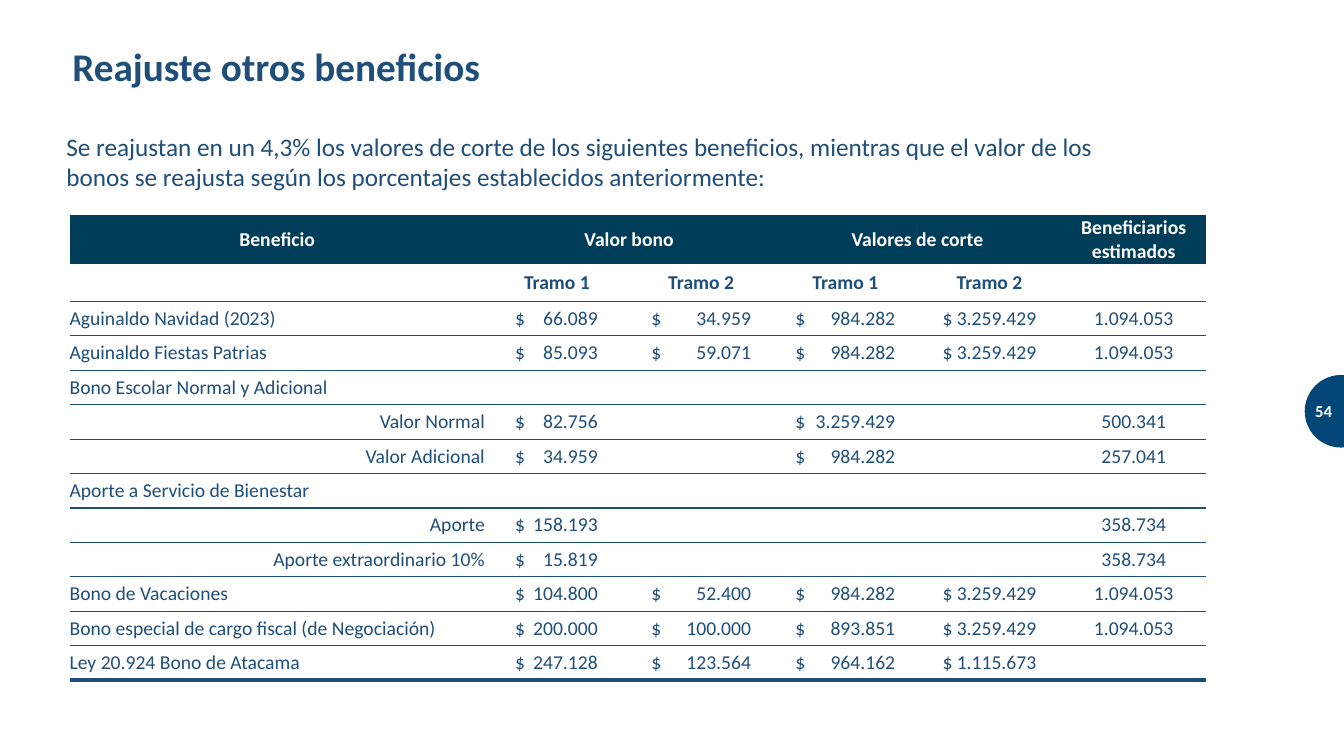
from lxml.etree import SubElement
from pptx import Presentation
from pptx.dml.color import RGBColor
from pptx.enum.shapes import MSO_SHAPE
from pptx.enum.text import MSO_ANCHOR, PP_ALIGN
from pptx.oxml.ns import qn
from pptx.util import Inches, Pt

NAVY = RGBColor(0x1F, 0x4E, 0x79)
HEADER = RGBColor(0x00, 0x3D, 0x58)
BADGE = RGBColor(0x00, 0x46, 0x77)
WHITE = RGBColor(0xFF, 0xFF, 0xFF)
PLAIN_TABLE = "{2D5ABB26-0587-4C30-8999-92F81FD0307C}"

COLUMN_WIDTHS = [4.12] + [1.43] * 5
HEADER_HEIGHTS = [0.49, 0.37]
TABLE_HEIGHT = 4.62
MONEY_INSETS = {1: (0.3, 0.82), 2: (0.22, 0.99), 3: (0.22, 0.99), 4: (0.25, 0.93)}
SUBITEMS = {"Valor Normal", "Valor Adicional", "Aporte", "Aporte extraordinario 10%"}
HEADINGS = [
    ["Beneficio", "Valor bono", "", "Valores de corte", "", "Beneficiarios estimados"],
    ["", "Tramo 1", "Tramo 2", "Tramo 1", "Tramo 2", ""],
]
BENEFITS = [
    ["Aguinaldo Navidad (2023)", "66.089", "34.959", "984.282", "3.259.429", "1.094.053"],
    ["Aguinaldo Fiestas Patrias", "85.093", "59.071", "984.282", "3.259.429", "1.094.053"],
    ["Bono Escolar Normal y Adicional", "", "", "", "", ""],
    ["Valor Normal", "82.756", "", "3.259.429", "", "500.341"],
    ["Valor Adicional", "34.959", "", "984.282", "", "257.041"],
    ["Aporte a Servicio de Bienestar", "", "", "", "", ""],
    ["Aporte", "158.193", "", "", "", "358.734"],
    ["Aporte extraordinario 10%", "15.819", "", "", "", "358.734"],
    ["Bono de Vacaciones", "104.800", "52.400", "984.282", "3.259.429", "1.094.053"],
    ["Bono especial de cargo fiscal (de Negociación)",
     "200.000", "100.000", "893.851", "3.259.429", "1.094.053"],
    ["Ley 20.924 Bono de Atacama", "247.128", "123.564", "964.162", "1.115.673", ""],
]


class SlideBuilder:
    font = "Calibri"

    def __init__(self, prs):
        self.s = prs.slides.add_slide(prs.slide_layouts[6])

    def format(self, p, size, color, bold=False, align=PP_ALIGN.LEFT):
        p.alignment = align
        for r in p.runs:
            r.font.name = self.font
            r.font.size = Pt(size)
            r.font.bold = bold
            r.font.color.rgb = color

    def text(self, text, box, size, color, bold=False, align=PP_ALIGN.LEFT,
             anchor=MSO_ANCHOR.MIDDLE):
        tf = self.s.shapes.add_textbox(*map(Inches, box)).text_frame
        tf.word_wrap = True
        tf.vertical_anchor = anchor
        tf.text = text
        self.format(tf.paragraphs[0], size, color, bold, align)

    def circle(self, box, color):
        sp = self.s.shapes.add_shape(MSO_SHAPE.OVAL, *map(Inches, box))
        sp.shadow.inherit = False
        sp.fill.solid()
        sp.fill.fore_color.rgb = color
        sp.line.fill.background()

    def border(self, cell, side, width):
        ln = SubElement(cell._tc.get_or_add_tcPr(), qn(f"a:{side}"), w=str(Pt(width)))
        if width:
            fill = SubElement(ln, qn("a:solidFill"))
            SubElement(fill, qn("a:srgbClr"), val=str(NAVY))
        else:
            SubElement(ln, qn("a:noFill"))

    def money(self, cell, col):
        inset, tab = MONEY_INSETS[col]
        cell.margin_left = Inches(inset)
        p = cell.text_frame.paragraphs[0]
        p.text = f"$\t{p.text}"
        tabs = SubElement(p._p.get_or_add_pPr(), qn("a:tabLst"))
        SubElement(tabs, qn("a:tab"), pos=str(Inches(tab)), algn="r")

    def cell(self, cell, text, row, col, last):
        cell.margin_left = cell.margin_right = cell.margin_top = cell.margin_bottom = 0
        cell.vertical_anchor = MSO_ANCHOR.MIDDLE
        self.border(cell, "lnT", 1 if row > 1 else 0)
        self.border(cell, "lnB", 3 if row == last else 1 if row else 0)
        if row == 0:
            cell.fill.solid()
            cell.fill.fore_color.rgb = HEADER
        else:
            cell.fill.background()
        if not text:
            return
        cell.text_frame.text = text
        heading = row < len(HEADINGS)
        align = PP_ALIGN.CENTER
        if not heading and col in MONEY_INSETS:
            self.money(cell, col)
            align = PP_ALIGN.LEFT
        elif not heading and col == 0:
            align = PP_ALIGN.RIGHT if text in SUBITEMS else PP_ALIGN.LEFT
        color = WHITE if row == 0 else NAVY
        self.format(cell.text_frame.paragraphs[0], 14, color, heading, align)

    def table(self, rows, left, top):
        row_height = (TABLE_HEIGHT - sum(HEADER_HEIGHTS)) / len(BENEFITS)
        heights = HEADER_HEIGHTS + [row_height] * len(BENEFITS)
        box = (left, top, sum(COLUMN_WIDTHS), TABLE_HEIGHT)
        frame = self.s.shapes.add_table(len(rows), len(COLUMN_WIDTHS), *map(Inches, box))
        table = frame.table
        table.first_row = table.horz_banding = False
        table._tbl.tblPr.find(qn("a:tableStyleId")).text = PLAIN_TABLE
        for column, width in zip(table.columns, COLUMN_WIDTHS):
            column.width = Inches(width)
        for row, height in zip(table.rows, heights):
            row.height = Inches(height)
        for i, values in enumerate(rows):
            for j, value in enumerate(values):
                self.cell(table.cell(i, j), value, i, j, len(rows) - 1)
        for col in (1, 3):
            table.cell(0, col).merge(table.cell(0, col + 1))


def main():
    prs = Presentation()
    prs.slide_width = Inches(13.33)
    prs.slide_height = Inches(7.5)
    slide = SlideBuilder(prs)
    slide.text("Se reajustan en un 4,3% los valores de corte de los siguientes beneficios, "
               "mientras que el valor de los bonos se reajusta según los porcentajes "
               "establecidos anteriormente:",
               (0.56, 1.25, 10.47, 0.71), 18, NAVY, anchor=MSO_ANCHOR.TOP)
    slide.text("Reajuste otros beneficios", (0.62, 0.33, 9.06, 0.64), 28, NAVY, True)
    slide.table(HEADINGS + BENEFITS, 0.69, 2.13)
    slide.circle((12.94, 3.72, 0.72, 0.72), BADGE)
    slide.text("54", (12.86, 3.88, 0.45, 0.4), 12, WHITE, True, PP_ALIGN.RIGHT)
    prs.save("out.pptx")


if __name__ == "__main__":
    main()
